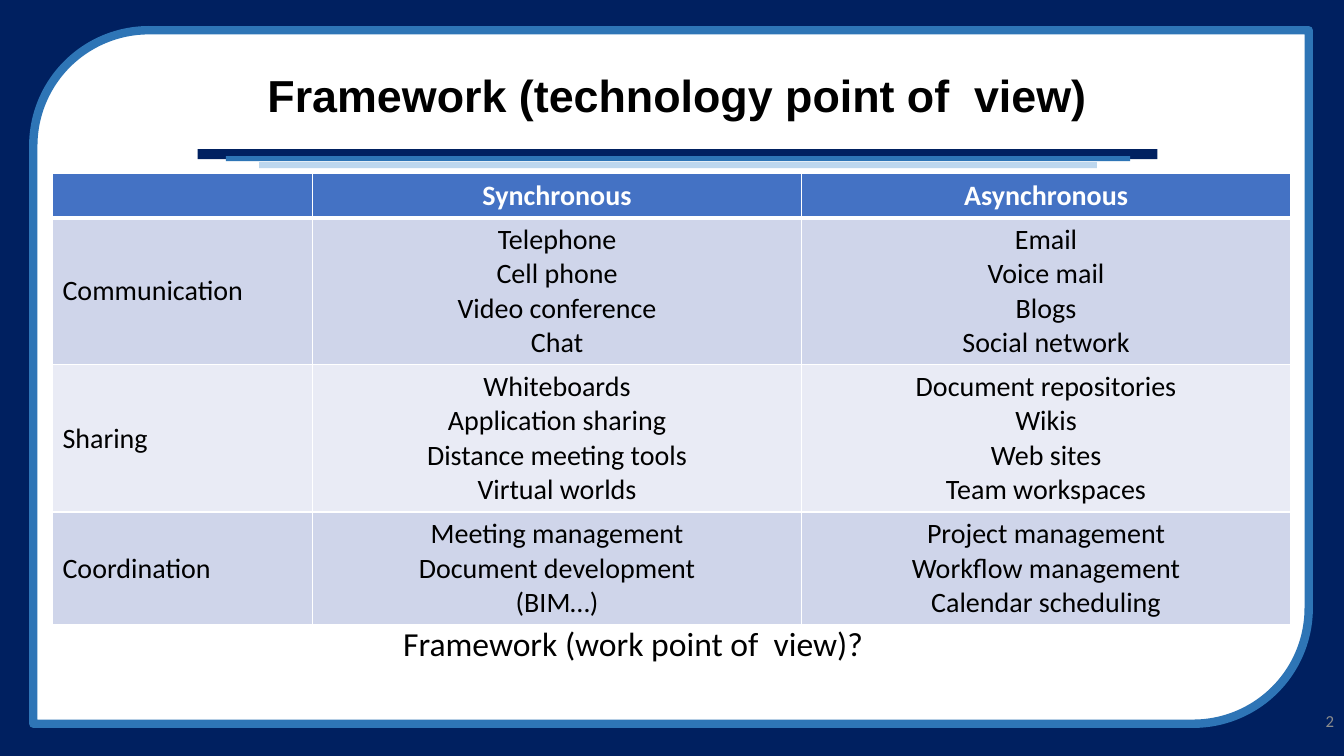
from dataclasses import dataclass

from lxml import etree
from pptx import Presentation
from pptx.dml.color import RGBColor
from pptx.enum.shapes import MSO_SHAPE
from pptx.enum.text import MSO_ANCHOR, PP_ALIGN
from pptx.oxml.ns import qn
from pptx.util import Emu, Pt

RECT = MSO_SHAPE.RECTANGLE
DIAGONAL_ROUND = MSO_SHAPE.ROUND_2_DIAG_RECTANGLE
LEFT, CENTER, RIGHT = PP_ALIGN.LEFT, PP_ALIGN.CENTER, PP_ALIGN.RIGHT
TOP, MIDDLE = MSO_ANCHOR.TOP, MSO_ANCHOR.MIDDLE
EMU_PER_PX = 9144  # 100 px to the inch


@dataclass(frozen=True)
class Theme:
    navy: str = "002060"
    blue: str = "2E75B6"
    pale: str = "BDD7EE"
    white: str = "FFFFFF"
    black: str = "000000"
    gray: str = "8C8C8C"
    header: str = "4472C4"
    bands: tuple = ("CFD5EA", "E9EBF5")
    title_font: str = "Arial"
    body_font: str = "Calibri"
    title_size: int = 32
    caption_size: int = 24
    table_size: int = 20
    number_size: int = 12


THEME = Theme()

COLUMN_WIDTHS = (258, 485, 485)
LINE_HEIGHT, CELL_PADDING = 34, 10
HEADINGS = ("", "Synchronous", "Asynchronous")
TOOLS = (
    ("Communication",
     ("Telephone", "Cell phone", "Video conference", "Chat"),
     ("Email", "Voice mail", "Blogs", "Social network")),
    ("Sharing",
     ("Whiteboards", "Application sharing", "Distance meeting tools", "Virtual worlds"),
     ("Document repositories", "Wikis", "Web sites", "Team workspaces")),
    ("Coordination",
     ("Meeting management", "Document development", "(BIM…)"),
     ("Project management", "Workflow management", "Calendar scheduling")),
)


def px(length):
    return Emu(length * EMU_PER_PX)


def color(code):
    return RGBColor.from_string(code)


def write(frame, lines, size, ink=THEME.black, font=THEME.body_font,
          bold=False, align=LEFT, spacing=None):
    """Fill a text frame with one paragraph per line."""
    for index, line in enumerate(lines):
        para = frame.add_paragraph() if index else frame.paragraphs[0]
        para.alignment = align
        if spacing:
            para.line_spacing = spacing
        span = para.add_run()
        span.text = line
        span.font.name, span.font.size, span.font.bold = font, Pt(size), bold
        span.font.color.rgb = color(ink)


def add_text(page, box, text, anchor=TOP, wrap=True, **style):
    frame = page.shapes.add_textbox(*map(px, box)).text_frame
    frame.word_wrap = wrap
    frame.vertical_anchor = anchor
    write(frame, [text], **style)


def add_block(page, box, fill, kind=RECT, line=None, line_width=0):
    shape = page.shapes.add_shape(kind, *map(px, box))
    shape.shadow.inherit = False
    shape.fill.solid()
    shape.fill.fore_color.rgb = color(fill)
    if line:
        shape.line.color.rgb = color(line)
        shape.line.width = Pt(line_width)
    else:
        shape.line.fill.background()


def draw_frame(page, box):
    """Navy backdrop with the white panel inside it."""
    left, top, width, height = box
    add_block(page, box, THEME.navy)
    add_block(page, (left + 33, top + 30, width - 68, height - 62), THEME.white,
              kind=DIAGONAL_ROUND, line=THEME.blue, line_width=6)


def draw_heading(page, box, text):
    """Title over three stepped rules."""
    left, top, width, height = box
    rules = ((0, 99, width, 10, THEME.navy),
             (28, 106, width - 55, 5, THEME.blue),
             (61, 112, width - 121, 6, THEME.pale))
    for x, y, rule_width, rule_height, fill in rules:
        add_block(page, (left + x, top + y, rule_width, rule_height), fill)
    add_text(page, box, text, anchor=MIDDLE, size=THEME.title_size,
             font=THEME.title_font, bold=True, align=CENTER, spacing=0.9)


def set_borders(cell, **widths):
    """White cell borders, 1 pt unless a side is given."""
    properties = cell._tc.get_or_add_tcPr()
    for side in "LRTB":
        edge = etree.SubElement(properties, qn(f"a:ln{side}"),
                                w=str(Pt(widths.get(side, 1))))
        fill = etree.SubElement(edge, qn("a:solidFill"))
        etree.SubElement(fill, qn("a:srgbClr"), val=THEME.white)


def fill_cell(cell, lines, fill, anchor=MIDDLE, borders=None, **style):
    set_borders(cell, **(borders or {}))
    cell.fill.solid()
    cell.fill.fore_color.rgb = color(fill)
    cell.vertical_anchor = anchor
    write(cell.text_frame, lines, size=THEME.table_size, **style)


def draw_tools_table(page, box):
    """Tools by purpose and by timing."""
    line_counts = [1] + [len(row[1]) for row in TOOLS]
    table = page.shapes.add_table(len(line_counts), len(HEADINGS),
                                  *map(px, box)).table
    for column, width in zip(table.columns, COLUMN_WIDTHS):
        column.width = px(width)
    for row, count in zip(table.rows, line_counts):
        row.height = px(count * LINE_HEIGHT + CELL_PADDING)

    # Header row
    for column, heading in enumerate(HEADINGS):
        fill_cell(table.cell(0, column), [heading], THEME.header, anchor=TOP,
                  borders={"B": 3}, ink=THEME.white, bold=True, align=CENTER)

    # Banded body rows
    for row, (purpose, *lists) in enumerate(TOOLS, start=1):
        band = THEME.bands[(row - 1) % 2]
        borders = {"T": 3} if row == 1 else {}
        fill_cell(table.cell(row, 0), [purpose], band, borders=borders)
        for column, lines in enumerate(lists, start=1):
            fill_cell(table.cell(row, column), lines, band,
                      borders=borders, align=CENTER)


def draw_framework_slide(page, box):
    left, top, width, height = box
    draw_frame(page, box)
    draw_heading(page, (left + 196, top + 49, 952, 97),
                 "Framework (technology point of  view)")
    draw_tools_table(page, (left + 52, top + 172, sum(COLUMN_WIDTHS), 440))
    # Slide number and closing question
    add_text(page, (left + width - 300, top + 695, 300, 40), "2", anchor=MIDDLE,
             size=THEME.number_size, ink=THEME.gray, align=RIGHT)
    add_text(page, (left + 390, top + 613, 487, 50),
             "Framework (work point of  view)?", wrap=False,
             size=THEME.caption_size)


def main():
    deck = Presentation()
    deck.slide_width, deck.slide_height = px(1333), px(750)
    page = deck.slides.add_slide(deck.slide_layouts[6])
    draw_framework_slide(page, (0, 0, 1333, 750))
    deck.save("out.pptx")


if __name__ == "__main__":
    main()
